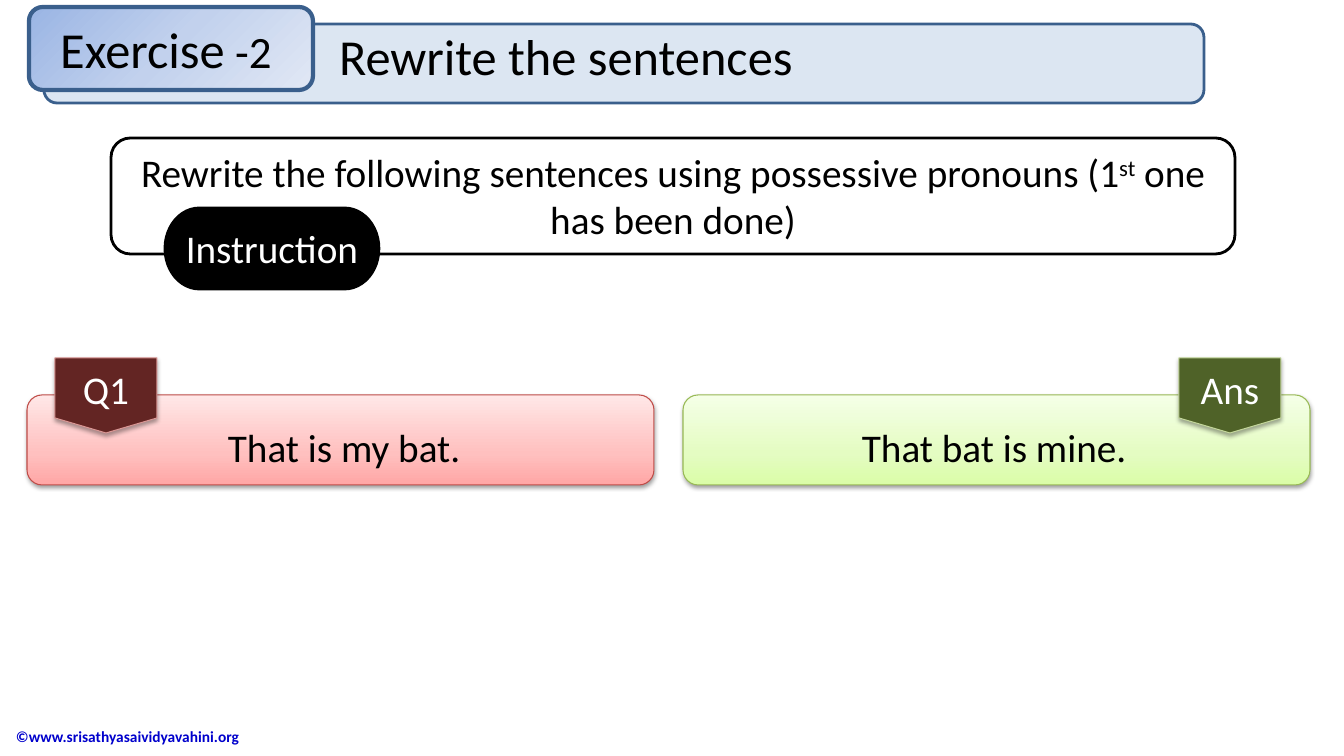
from pptx import Presentation
from pptx import util as u
from pptx.dml import color
from pptx.enum import shapes, text
from pptx.oxml import ns, parse_xml

PX = 914400 / 100.8
KIND = shapes.MSO_SHAPE
ALIGN = text.PP_ALIGN
ANCHOR = text.MSO_ANCHOR


def px(*lengths):
    return [u.Emu(round(n * PX)) for n in lengths]


def rgb(value):
    return color.RGBColor.from_string(value)


def shadow_xml(alpha, blur, dist, angle):
    return parse_xml(
        f'<a:effectLst {ns.nsdecls("a")}><a:outerShdw blurRad="{u.Pt(blur)}" dist="{u.Pt(dist)}" '
        f'dir="{angle * 60000}" algn="ctr" rotWithShape="0"><a:srgbClr val="000000">'
        f'<a:alpha val="{alpha * 1000}"/></a:srgbClr></a:outerShdw></a:effectLst>')


def gradient_xml(stops, angle):
    marks = "".join(f'<a:gs pos="{place * 1000}"><a:srgbClr val="{shade}"/></a:gs>'
                    for place, shade in stops)
    return parse_xml(f'<a:gradFill {ns.nsdecls("a")} rotWithShape="1"><a:gsLst>{marks}</a:gsLst>'
                     f'<a:lin ang="{angle * 60000}" scaled="0"/></a:gradFill>')


def write(frame, *runs, size=28, ink="000000", bold=False, align=ALIGN.CENTER,
          anchor=ANCHOR.TOP, wrap=True, shadow=False):
    frame.word_wrap = wrap
    frame.auto_size = text.MSO_AUTO_SIZE.NONE
    frame.vertical_anchor = anchor
    frame.margin_left = frame.margin_right = u.Inches(0.1)
    frame.margin_top = frame.margin_bottom = u.Inches(0.05)
    line = frame.paragraphs[0]
    line.alignment = align
    for words, changes in runs:
        run = line.add_run()
        run.text = words
        font = run.font
        font.size = u.Pt(changes.get("size", size))
        font.bold = bold
        font.color.rgb = rgb(ink)
        if shadow:
            font.fill._xPr.append(shadow_xml(40, 3, 3, 90))
        font.name = "Calibri"
        if "raise_by" in changes:
            run._r.get_or_add_rPr().set("baseline", str(changes["raise_by"] * 1000))


class ExerciseSlide:
    """Holds the deck and draws the parts of an exercise slide."""

    def __init__(self):
        self.deck = Presentation()
        self.deck.slide_width, self.deck.slide_height = px(1344, 756)
        self.slide = self.deck.slides.add_slide(self.deck.slide_layouts[5])

    def panel(self, kind, box, fill, edge, weight, angle=270, shadow=None):
        panel = self.slide.shapes.add_shape(kind, *px(*box))
        panel.shadow.inherit = False
        panel.line.color.rgb = rgb(edge)
        panel.line.width = u.Pt(weight)
        if isinstance(fill, str):
            panel.fill.solid()
            panel.fill.fore_color.rgb = rgb(fill)
        else:
            panel.element.spPr.find(ns.qn("a:prstGeom")).addnext(gradient_xml(fill, angle))
        if shadow:
            effects = panel.element.spPr.find(ns.qn("a:effectLst"))
            effects.getparent().replace(effects, shadow_xml(*shadow))
        return panel

    def label(self, box, words, **style):
        label = self.slide.shapes.add_textbox(*px(*box))
        write(label.text_frame, (words, {}), **style)

    def title(self, box, words):
        title = self.slide.shapes.title
        title.left, title.top, title.width, title.height = px(*box)
        write(title.text_frame, (words, {}), size=36, align=ALIGN.LEFT, shadow=True)
        self.slide.shapes.element.append(title.element)

    def card(self, left, sentence, sentence_left, shades, edge, tag, tag_left, tag_fill, tag_edge):
        stops = list(zip((0, 35, 100), shades))
        self.panel(KIND.FLOWCHART_ALTERNATE_PROCESS, (left, 395, 627, 90), stops, edge, 0.75,
                   shadow=(38, 3.1, 1.6, 90))
        self.label((sentence_left, 418, 602, 57), sentence, shadow=True)
        self.panel(KIND.FLOWCHART_OFFPAGE_CONNECTOR, (tag_left, 358, 102, 75), tag_fill, tag_edge,
                   0.75, shadow=(35, 3.1, 1.8, 90))
        self.label((tag_left + 8, 360, 86, 57), tag, ink="FFFFFF")


def main():
    page = ExerciseSlide()
    page.label((6, 716, 356, 41), "©www.srisathyasaividyavahini.org", size=11, ink="0000CC",
               bold=True, align=ALIGN.LEFT, anchor=ANCHOR.MIDDLE)

    page.panel(KIND.FLOWCHART_ALTERNATE_PROCESS, (44, 24, 1160, 79), "DCE6F2", "3A5F8C", 2)
    exercise = page.panel(KIND.ROUNDED_RECTANGLE, (29, 7, 284, 83),
                          [(0, "9AB5E4"), (50, "C2D1ED"), (100, "E1E8F5")], "3A5F8C", 3, angle=45)
    write(exercise.text_frame, ("Exercise", {}), (" -2 ", {"size": 32}), size=36,
          anchor=ANCHOR.MIDDLE, shadow=True)
    page.title((329, 20, 907, 72), "Rewrite the sentences")

    task = page.panel(KIND.FLOWCHART_ALTERNATE_PROCESS, (111, 138, 1124, 116), "FFFFFF", "000000", 2)
    write(task.text_frame, ("Rewrite the following sentences using possessive pronouns (1", {}),
          ("st", {"raise_by": 30}), (" one has been done)", {}))
    instruction = page.panel(KIND.FLOWCHART_TERMINATOR, (165, 208, 214, 81), "000000", "000000", 2)
    write(instruction.text_frame, ("Instruction", {}), ink="FFFFFF", wrap=False)

    page.card(27, "That is my bat.", 43, ("FFA6A5", "FFC0BF", "FFE7E7"), "BF4C48",
              "Q1", 55, "632523", "D99694")
    page.card(683, "That bat is mine.", 693, ("DAFDA7", "E4FCC2", "F5FFE7"), "98B955",
              "Ans", 1179, "4F6228", "C3D69B")
    page.deck.save("out.pptx")


if __name__ == "__main__":
    main()
